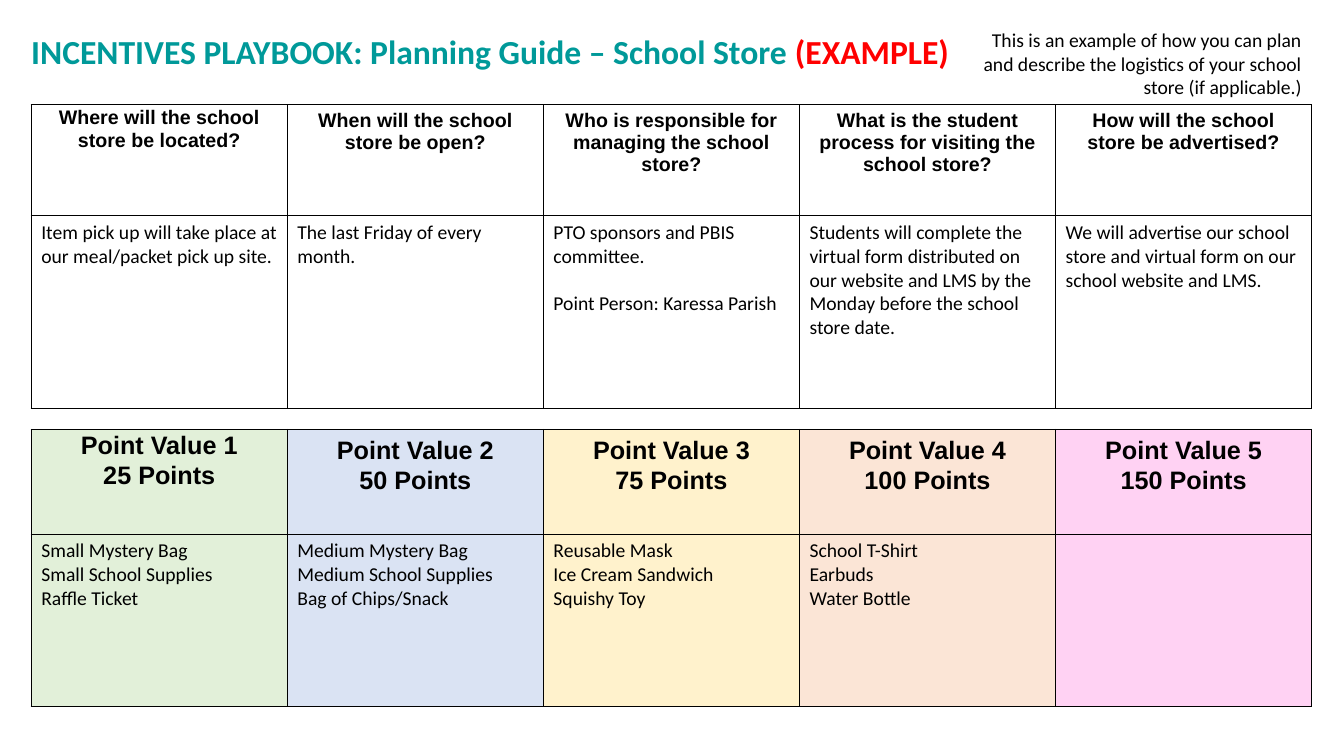
"""Build the school store planning slide."""
from dataclasses import dataclass

from lxml.etree import SubElement
from pptx import Presentation
from pptx.dml.color import RGBColor
from pptx.enum.text import MSO_ANCHOR, PP_ALIGN
from pptx.oxml.ns import qn
from pptx.util import Emu, Pt

PX = 9144
BLACK = RGBColor(0x00, 0x00, 0x00)
TEAL = RGBColor(0x00, 0x99, 0x99)
RED = RGBColor(0xFF, 0x00, 0x00)
GREEN = RGBColor(0xE2, 0xF0, 0xD9)
BLUE = RGBColor(0xDA, 0xE3, 0xF3)
YELLOW = RGBColor(0xFF, 0xF2, 0xCC)
PEACH = RGBColor(0xFB, 0xE5, 0xD6)
PINK = RGBColor(0xFF, 0x33, 0xCC)
ALPHA = {PINK: 22000}
LEFT, COLUMN = 31, 254


@dataclass
class Entry:
    head: list[str]
    body: list[str]
    color: RGBColor | None = None


@dataclass
class Grid:
    top: int
    rows: tuple[int, int]
    size: int
    gap: int
    loose: int
    entries: list[Entry]


LOGISTICS = Grid(104, (110, 191), 14, 17, 1, [
    Entry(["Where will the school store be located?"],
          ["Item pick up will take place at our meal/packet pick up site."]),
    Entry(["When will the school store be open?"],
          ["The last Friday of every month."]),
    Entry(["Who is responsible for managing the school store?"],
          ["PTO sponsors and PBIS committee.", "Point Person: Karessa Parish"]),
    Entry(["What is the student process for visiting the school store?"],
          ["Students will complete the virtual form distributed on our website "
           "and LMS by the Monday before the school store date."]),
    Entry(["How will the school store be advertised?"],
          ["We will advertise our school store and virtual form on our school "
           "website and LMS."]),
])

PRIZES = Grid(426, (104, 171), 18, 0, 5, [
    Entry(["Point Value 1", "25 Points"],
          ["Small Mystery Bag", "Small School Supplies", "Raffle Ticket"], GREEN),
    Entry(["Point Value 2", "50 Points"],
          ["Medium Mystery Bag", "Medium School Supplies", "Bag of Chips/Snack"], BLUE),
    Entry(["Point Value 3", "75 Points"],
          ["Reusable Mask", "Ice Cream Sandwich", "Squishy Toy"], YELLOW),
    Entry(["Point Value 4", "100 Points"],
          ["School T-Shirt", "Earbuds", "Water Bottle"], PEACH),
    Entry(["Point Value 5", "150 Points"], [], PINK),
])


def px(count: int) -> Emu:
    """Turn px into EMU."""
    return Emu(count * PX)


def style(font, name: str, size: int, color: RGBColor, bold: bool = False) -> None:
    """Set the look of a font."""
    font.name, font.size, font.bold = name, Pt(size), bold
    font.color.rgb = color


def paint(cell, color: RGBColor | None) -> None:
    """Give a cell thin black borders and its fill."""
    props = cell._tc.get_or_add_tcPr()
    for side in ("a:lnL", "a:lnR", "a:lnT", "a:lnB"):
        line = SubElement(props, qn(side), w=str(Pt(1)))
        solid = SubElement(line, qn("a:solidFill"))
        SubElement(solid, qn("a:srgbClr"), val=str(BLACK))
    if color is None:
        cell.fill.background()
        return
    cell.fill.solid()
    cell.fill.fore_color.rgb = color
    if color in ALPHA:
        tint = props.find(qn("a:solidFill")).find(qn("a:srgbClr"))
        SubElement(tint, qn("a:alpha"), val=str(ALPHA[color]))


def write(cell, lines: list[str], name: str, size: int, bold: bool) -> None:
    """Write one paragraph for each line."""
    cell.text = "\n".join(lines)
    for para in cell.text_frame.paragraphs:
        style(para.font, name, size, BLACK, bold)


def draw(slide, grid: Grid) -> None:
    """Draw a table with a heading and a text in each column."""
    count = len(grid.entries)
    frame = slide.shapes.add_table(2, count, px(LEFT), px(grid.top),
                                   px(COLUMN * count), px(sum(grid.rows)))
    table = frame.table
    for row, height in zip(table.rows, grid.rows):
        row.height = px(height)
    for index, entry in enumerate(grid.entries):
        table.columns[index].width = px(COLUMN)
        head, body = table.cell(0, index), table.cell(1, index)
        write(head, entry.head, "Arial", grid.size, True)
        for para in head.text_frame.paragraphs:
            para.alignment = PP_ALIGN.CENTER
            if index < grid.loose:
                para.line_spacing = 1.07
        write(body, entry.body, "Calibri", 14, False)
        for para in body.text_frame.paragraphs[1:]:
            para.space_before = Pt(grid.gap)
        for cell in (head, body):
            paint(cell, entry.color)
    first = table.cell(0, 0)
    first.margin_left = first.margin_right = px(7)
    first.margin_top = first.margin_bottom = 0


def label(slide) -> None:
    """Fill the title and add the note beside it."""
    title = slide.shapes.title
    title.left, title.top, title.width, title.height = map(px, (21, 23, 939, 56))
    frame = title.text_frame
    frame.word_wrap = True
    frame.vertical_anchor = MSO_ANCHOR.MIDDLE
    para = frame.paragraphs[0]
    para.alignment = PP_ALIGN.LEFT
    for text, color in (("INCENTIVES PLAYBOOK: Planning Guide – School Store ", TEAL),
                        ("(EXAMPLE)", RED)):
        run = para.add_run()
        run.text = text
        style(run.font, "Calibri", 24, color, True)

    note = slide.shapes.add_textbox(*map(px, (943, 23, 358, 81))).text_frame
    note.word_wrap = True
    note.text = ("This is an example of how you can plan and describe the "
                 "logistics of your school store (if applicable.)")
    para = note.paragraphs[0]
    para.alignment = PP_ALIGN.RIGHT
    style(para.font, "Calibri", 14, BLACK)


def main() -> None:
    """Build and save the deck."""
    deck = Presentation()
    deck.slide_width, deck.slide_height = px(1333), px(750)
    slide = deck.slides.add_slide(deck.slide_layouts[5])
    label(slide)
    for grid in (LOGISTICS, PRIZES):
        draw(slide, grid)
    deck.save("out.pptx")


if __name__ == "__main__":
    main()
